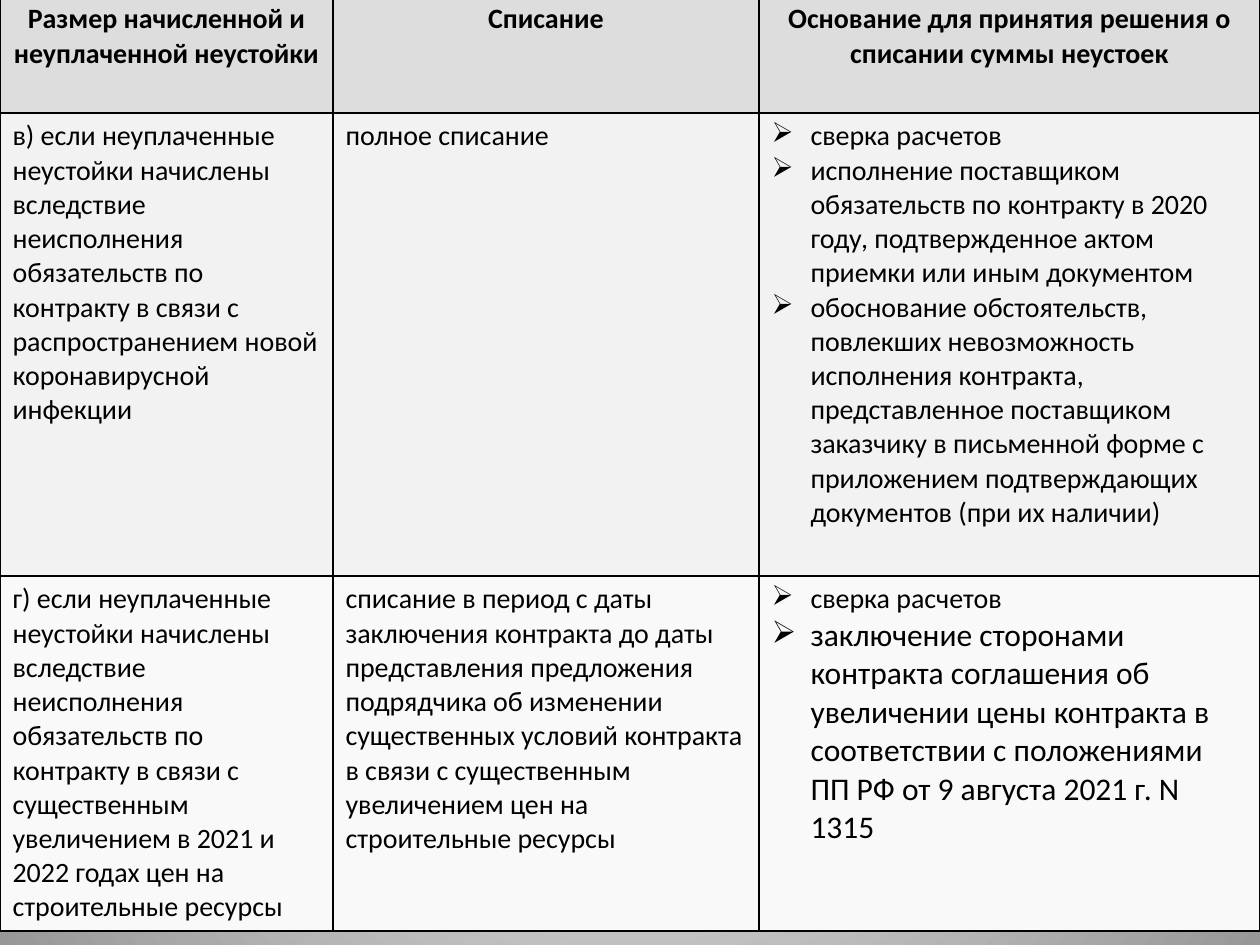
"""Builds a slide with a table of the rules for writing off penalties."""

from dataclasses import dataclass

from lxml.etree import SubElement
from pptx import Presentation
from pptx.dml.color import RGBColor
from pptx.enum.text import PP_ALIGN as Align
from pptx.oxml.ns import qn
from pptx.slide import Slide
from pptx.table import _Cell as Cell
from pptx.util import Emu, Pt

BLACK = RGBColor(0x00, 0x00, 0x00)
WHITE = RGBColor(0xFF, 0xFF, 0xFF)
EDGE_GRAY = RGBColor(0x97, 0x97, 0x97)
HEADER_GRAY = RGBColor(0xDD, 0xDD, 0xDD)
FULL_GRAY = RGBColor(0xF2, 0xF2, 0xF2)
PERIOD_GRAY = RGBColor(0xF9, 0xF9, 0xF9)

FONT = "Calibri"
SLIDE_WIDTH, SLIDE_HEIGHT = 1260, 945
TABLE_TOP = -4
COLUMN_WIDTHS = (333, 426, 501)
BULLET_INDENT = 39


@dataclass(frozen=True)
class Item:
    text: str
    size: int = 16


@dataclass(frozen=True)
class Rule:
    penalty: str
    write_off: str
    grounds: tuple[Item, ...]
    height: int
    fill: RGBColor
    header: bool = False


RULES = (
    Rule(
        "Размер начисленной и неуплаченной неустойки",
        "Списание",
        (Item("Основание для принятия решения о списании суммы неустоек"),),
        117, HEADER_GRAY, header=True,
    ),
    Rule(
        "в) если неуплаченные неустойки начислены вследствие неисполнения "
        "обязательств по контракту в связи с распространением новой "
        "коронавирусной инфекции",
        "полное списание",
        (
            Item("сверка расчетов"),
            Item("исполнение поставщиком обязательств по контракту в 2020 году, "
                 "подтвержденное актом приемки или иным документом"),
            Item("обоснование обстоятельств, повлекших невозможность исполнения "
                 "контракта, представленное поставщиком заказчику в письменной "
                 "форме с приложением подтверждающих документов (при их наличии)"),
        ),
        463, FULL_GRAY,
    ),
    Rule(
        "г) если неуплаченные неустойки начислены вследствие неисполнения "
        "обязательств по контракту в связи с существенным увеличением в 2021 и "
        "2022 годах цен на строительные ресурсы",
        "списание в период с даты заключения контракта до даты представления "
        "предложения подрядчика об изменении существенных условий контракта "
        "в связи с существенным увеличением цен на строительные ресурсы",
        (
            Item("сверка расчетов"),
            Item("заключение сторонами контракта соглашения об увеличении цены "
                 "контракта в соответствии с положениями ПП РФ от 9 августа "
                 "2021 г. N 1315", 18),
        ),
        353, PERIOD_GRAY,
    ),
)


def px(length: int) -> Emu:
    return Emu(round(length * 914400 / 126))


def paint_background(slide: Slide) -> None:
    fill = slide.background.fill
    fill.gradient()
    for stop, color in zip(fill.gradient_stops, (WHITE, EDGE_GRAY)):
        stop.color.rgb = color
    gradient = slide.element.find(".//" + qn("a:gradFill"))
    gradient.remove(gradient.find(qn("a:lin")))
    circle = SubElement(gradient, qn("a:path"), path="circle")
    SubElement(circle, qn("a:fillToRect"), l="50000", t="50000", r="50000", b="50000")


def draw_borders(cell: Cell) -> None:
    properties = cell._tc.get_or_add_tcPr()
    for side in ("lnL", "lnR", "lnT", "lnB"):
        line = SubElement(properties, qn(f"a:{side}"), w=str(Pt(1)))
        color = SubElement(SubElement(line, qn("a:solidFill")), qn("a:srgbClr"))
        color.set("val", str(BLACK))


def write(cell: Cell, items: tuple[Item, ...], *, bold: bool = False,
          align: Align = Align.LEFT, bulleted: bool = False) -> None:
    frame = cell.text_frame
    for index, item in enumerate(items):
        paragraph = frame.add_paragraph() if index else frame.paragraphs[0]
        paragraph.alignment = align
        if bulleted:
            properties = paragraph._p.get_or_add_pPr()
            properties.set("marL", str(px(BULLET_INDENT)))
            properties.set("indent", str(-px(BULLET_INDENT)))
            SubElement(properties, qn("a:buChar"), char="➢")
        run = paragraph.add_run()
        run.text = item.text
        run.font.name = FONT
        run.font.size = Pt(item.size)
        run.font.bold = bold
        run.font.color.rgb = BLACK


def draw_rules(slide: Slide) -> None:
    heights = [rule.height for rule in RULES]
    table = slide.shapes.add_table(
        len(RULES), len(COLUMN_WIDTHS),
        px(0), px(TABLE_TOP), px(sum(COLUMN_WIDTHS)), px(sum(heights)),
    ).table
    for column, width in zip(table.columns, COLUMN_WIDTHS):
        column.width = px(width)
    for row, rule in zip(table.rows, RULES):
        row.height = px(rule.height)
        contents = ((Item(rule.penalty),), (Item(rule.write_off),), rule.grounds)
        for cell, items in zip(row.cells, contents):
            draw_borders(cell)
            cell.fill.solid()
            cell.fill.fore_color.rgb = rule.fill
            write(
                cell, items, bold=rule.header,
                align=Align.CENTER if rule.header else Align.LEFT,
                bulleted=items is rule.grounds and not rule.header,
            )


def main() -> None:
    deck = Presentation()
    deck.slide_width, deck.slide_height = px(SLIDE_WIDTH), px(SLIDE_HEIGHT)
    slide = deck.slides.add_slide(deck.slide_layouts[6])
    paint_background(slide)
    draw_rules(slide)
    deck.save("out.pptx")


if __name__ == "__main__":
    main()
